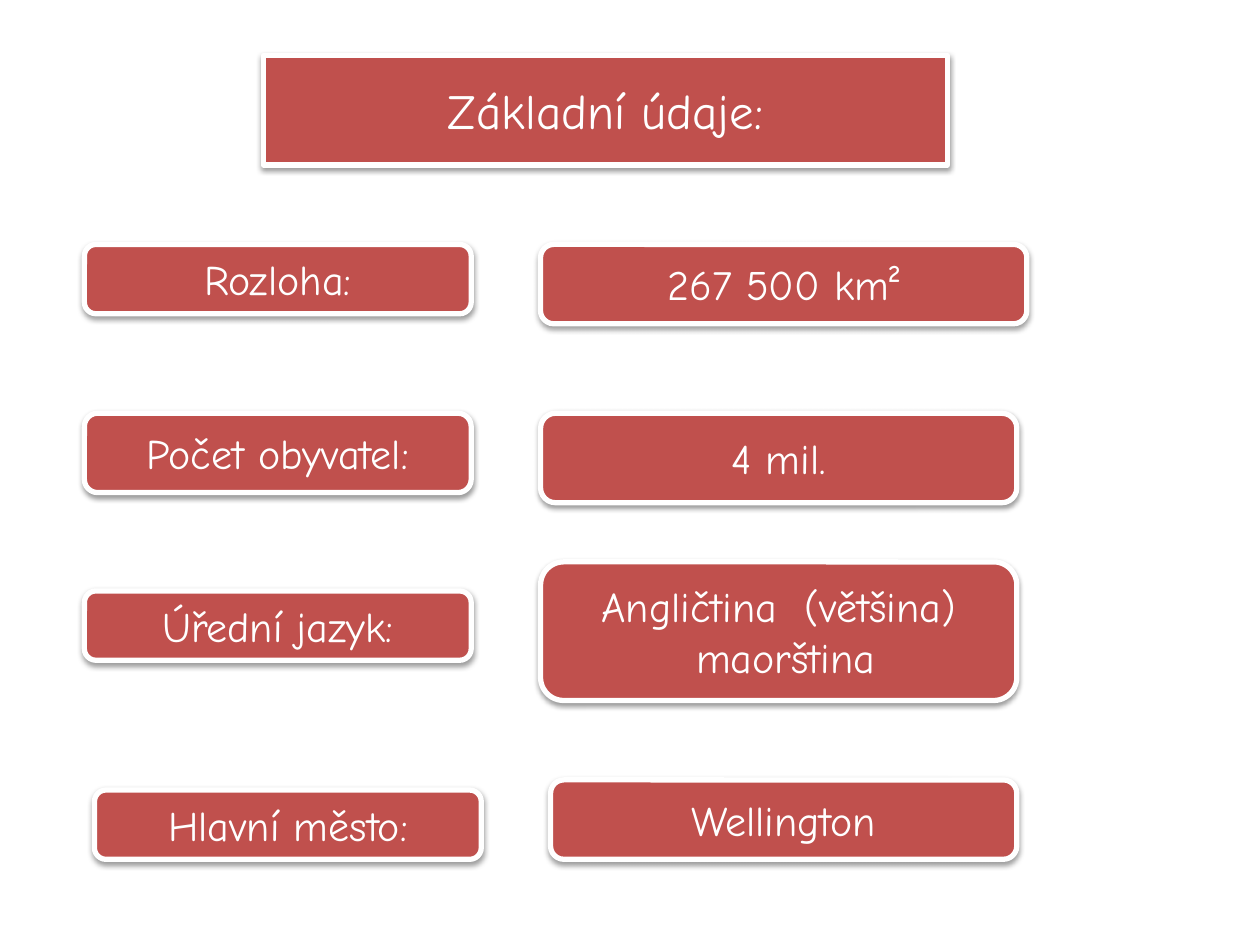
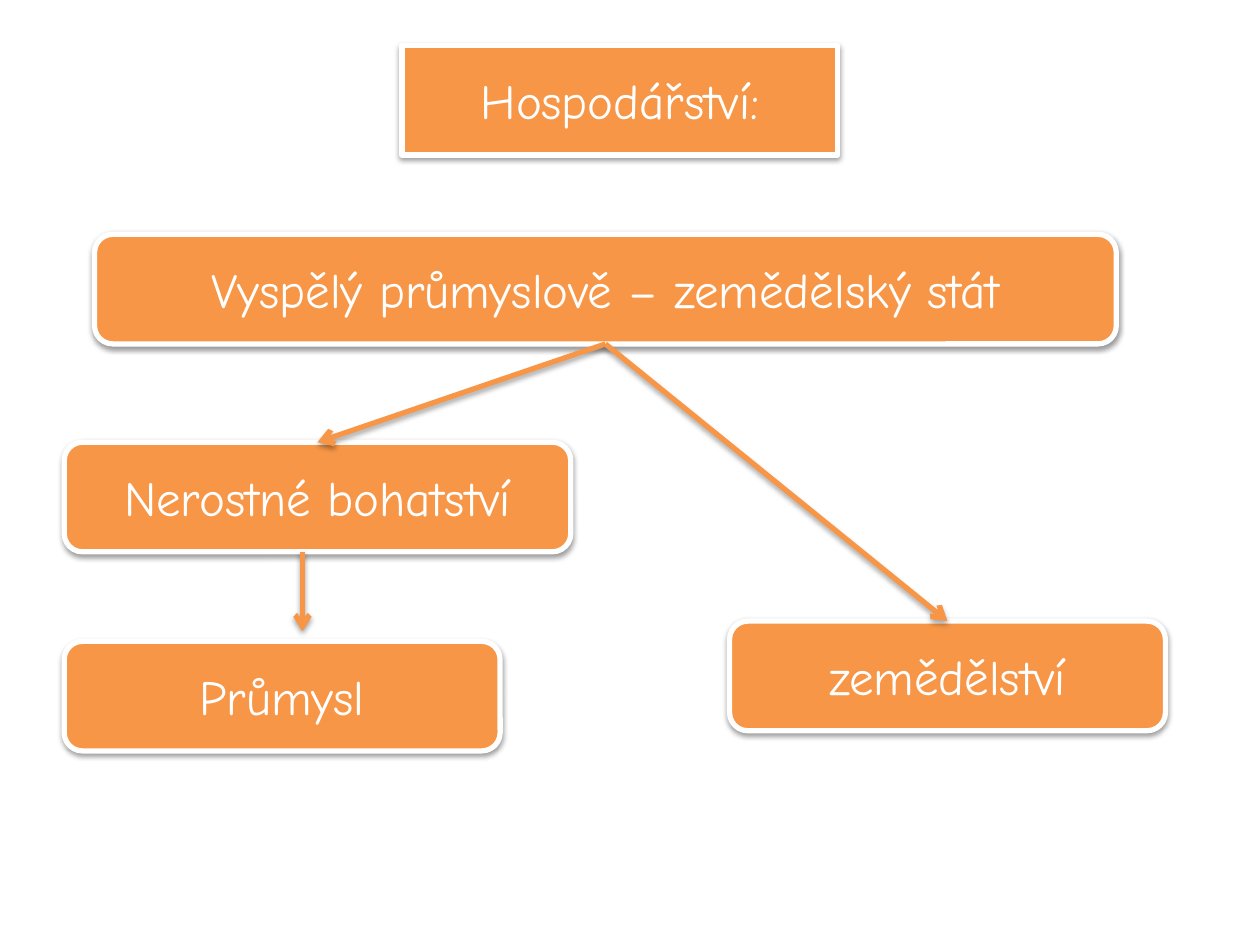
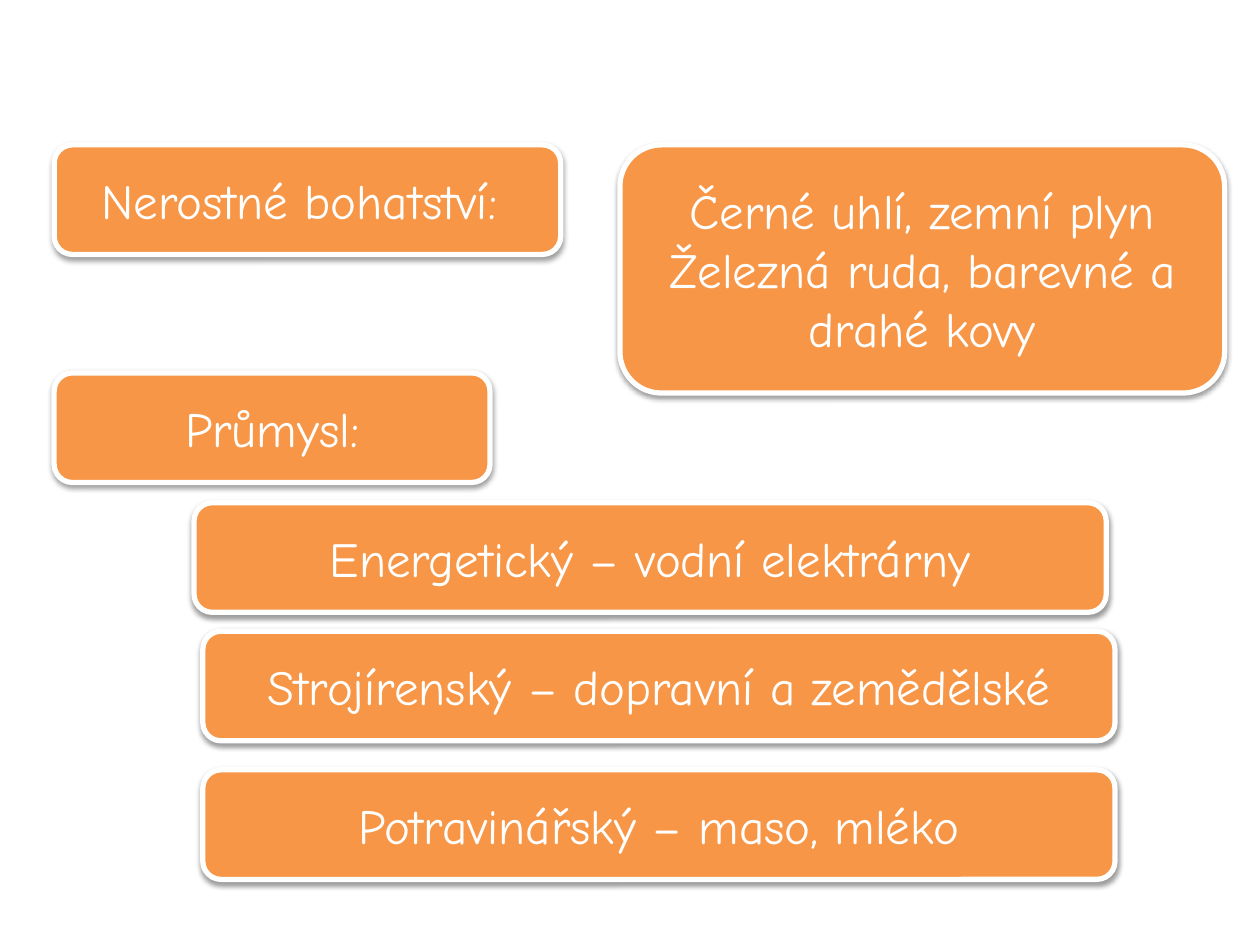
from dataclasses import dataclass

from lxml.etree import SubElement
from pptx import Presentation
from pptx.dml.color import RGBColor
from pptx.enum.shapes import MSO_CONNECTOR as Connector, MSO_SHAPE as Preset
from pptx.enum.text import MSO_ANCHOR as Anchor, MSO_AUTO_SIZE as AutoSize, PP_ALIGN as Align
from pptx.oxml.ns import qn
from pptx.util import Inches, Pt

TITLE_ONLY, BLANK = 5, 6


@dataclass(frozen=True)
class Theme:
    font: str = "Comic Neue"
    red: RGBColor = RGBColor(0xC0, 0x50, 0x4D)
    orange: RGBColor = RGBColor(0xF7, 0x96, 0x46)
    white: RGBColor = RGBColor(0xFF, 0xFF, 0xFF)
    shadow: str = "000000"
    large: Pt = Pt(28)
    medium: Pt = Pt(24)
    line: Pt = Pt(3)
    shadow_blur: Pt = Pt(3.1)


THEME = Theme()


@dataclass(frozen=True)
class Card:
    text: str
    left: float
    top: float
    width: float
    height: float = 0.87
    color: RGBColor = THEME.orange
    size: Pt = THEME.large

    @property
    def top_center(self) -> tuple[float, float]:
        return self.left + self.width / 2, self.top

    @property
    def bottom_center(self) -> tuple[float, float]:
        return self.left + self.width / 2, self.top + self.height


def fact(text: str, left: float, top: float, width: float, height: float) -> Card:
    return Card(text, left, top, width, height, THEME.red, THEME.medium)


def add_shadow(shape, opacity: int, distance: Pt) -> None:
    effects = SubElement(shape._element.spPr, qn("a:effectLst"))
    outer = SubElement(effects, qn("a:outerShdw"), blurRad=str(THEME.shadow_blur),
                       dist=str(distance), dir="5400000", rotWithShape="0")
    color = SubElement(outer, qn("a:srgbClr"), val=THEME.shadow)
    SubElement(color, qn("a:alpha"), val=str(opacity * 1000))


def format_card(shape, card: Card) -> None:
    shape.fill.solid()
    shape.fill.fore_color.rgb = card.color
    shape.line.color.rgb = THEME.white
    shape.line.width = THEME.line
    add_shadow(shape, opacity=38, distance=Pt(1.6))

    frame = shape.text_frame
    frame.text = card.text
    frame.word_wrap = True
    frame.auto_size = AutoSize.NONE
    frame.vertical_anchor = Anchor.MIDDLE
    for paragraph in frame.paragraphs:
        paragraph.alignment = Align.CENTER
        for span in paragraph.runs:
            span.font.name = THEME.font
            span.font.size = card.size
            span.font.color.rgb = THEME.white


def draw_card(page, card: Card) -> None:
    shape = page.shapes.add_shape(Preset.ROUNDED_RECTANGLE, Inches(card.left), Inches(card.top),
                                  Inches(card.width), Inches(card.height))
    format_card(shape, card)


def draw_title(page, card: Card) -> None:
    """Turn the title placeholder into a rounded card."""
    title = page.shapes.title
    title.left, title.top = Inches(card.left), Inches(card.top)
    title.width, title.height = Inches(card.width), Inches(card.height)
    geometry = SubElement(title._element.spPr, qn("a:prstGeom"), prst="roundRect")
    SubElement(geometry, qn("a:avLst"))
    format_card(title, card)


def draw_arrow(page, start: tuple[float, float], end: tuple[float, float]) -> None:
    arrow = page.shapes.add_connector(Connector.STRAIGHT, *map(Inches, start + end))
    arrow.line.color.rgb = THEME.orange
    arrow.line.width = THEME.line
    SubElement(arrow._element.spPr.find(qn("a:ln")), qn("a:tailEnd"), type="arrow")
    add_shadow(arrow, opacity=35, distance=Pt(1.8))


def add_page(deck, cards: list[Card], title: Card | None = None):
    page = deck.slides.add_slide(deck.slide_layouts[TITLE_ONLY if title else BLANK])
    if title:
        draw_title(page, title)
    for card in cards:
        draw_card(page, card)
    return page


def add_basic_facts(deck) -> None:
    add_page(deck, [
        fact("Rozloha:", 0.67, 1.94, 3.07, 0.55),
        fact("267 500 km²", 4.29, 1.94, 3.86, 0.63),
        fact("Počet obyvatel:", 0.67, 3.28, 3.07, 0.63),
        fact("4 mil.", 4.29, 3.28, 3.78, 0.71),
        fact("Úřední jazyk:", 0.67, 4.69, 3.07, 0.55),
        fact("Angličtina  (většina)\n maorština", 4.29, 4.46, 3.78, 1.1),
        fact("Hlavní město:", 0.75, 6.27, 3.07, 0.55),
        fact("Wellington", 4.37, 6.19, 3.7, 0.63),
    ], title=Card("Základní údaje:", 2.09, 0.44, 5.43, color=THEME.red))


def add_economy(deck) -> None:
    state = Card("Vyspělý průmyslově – zemědělský stát", 0.75, 1.86, 8.11)
    minerals = Card("Nerostné bohatství", 0.51, 3.51, 4.02)
    industry = Card("Průmysl", 0.51, 5.09, 3.46)
    farming = Card("zemědělství", 5.79, 4.93, 3.46)
    page = add_page(deck, [state, minerals, industry, farming],
                    title=Card("Hospodářství:", 3.19, 0.36, 3.46))
    draw_arrow(page, state.bottom_center, minerals.top_center)
    draw_arrow(page, (2.4, 4.38), (2.4, 5.01))
    draw_arrow(page, state.bottom_center, farming.top_center)


def add_resources_and_industry(deck) -> None:
    add_page(deck, [
        Card("Nerostné bohatství: ", 0.43, 1.15, 4.02),
        Card("Černé uhlí, zemní plyn\nŽelezná ruda, barevné a drahé kovy", 4.92, 1.15, 4.8, 1.97),
        Card("Průmysl:", 0.43, 2.96, 3.46),
        Card("Energetický – vodní elektrárny", 1.54, 3.99, 7.24),
        Card("Strojírenský – dopravní a zemědělské", 1.61, 5.01, 7.24),
        Card("Potravinářský – maso, mléko", 1.61, 6.11, 7.24),
    ])


def main() -> None:
    deck = Presentation()
    deck.slide_width, deck.slide_height = Inches(10), Inches(7.5)
    add_basic_facts(deck)
    add_economy(deck)
    add_resources_and_industry(deck)
    deck.save("out.pptx")


if __name__ == "__main__":
    main()
